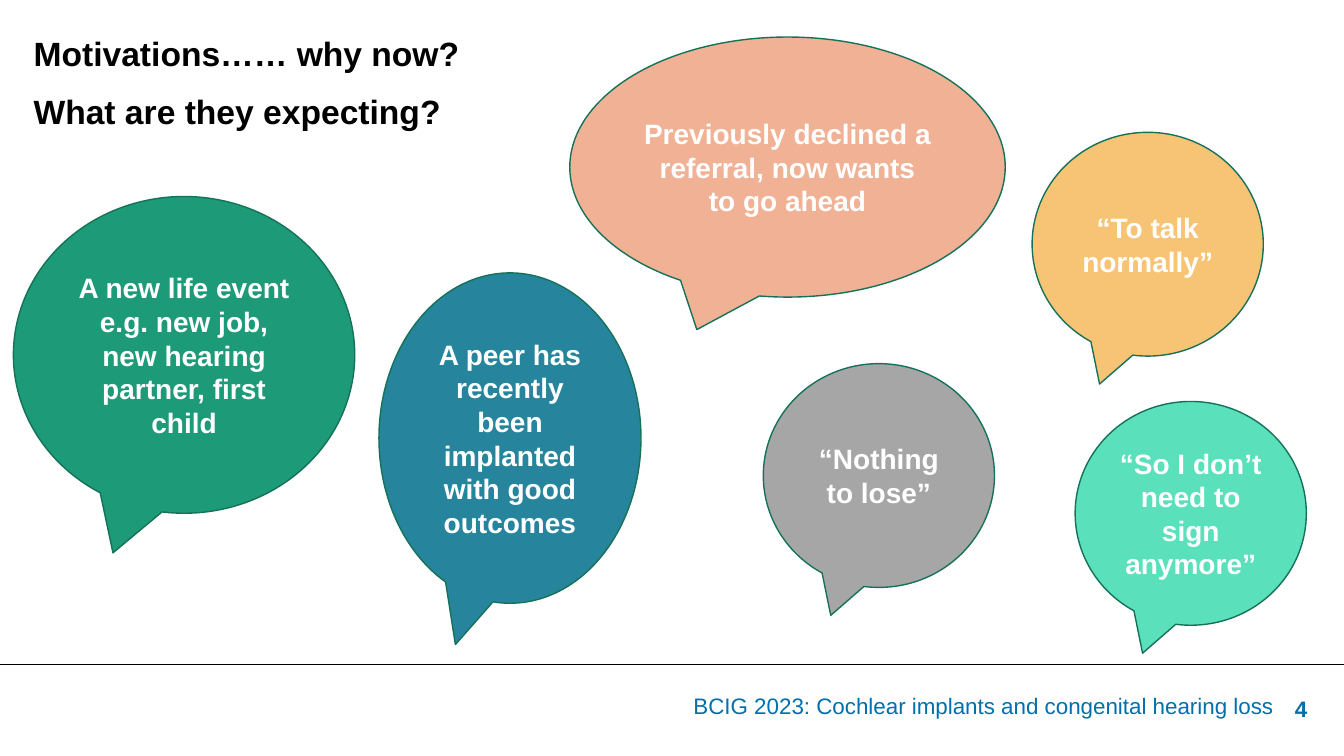
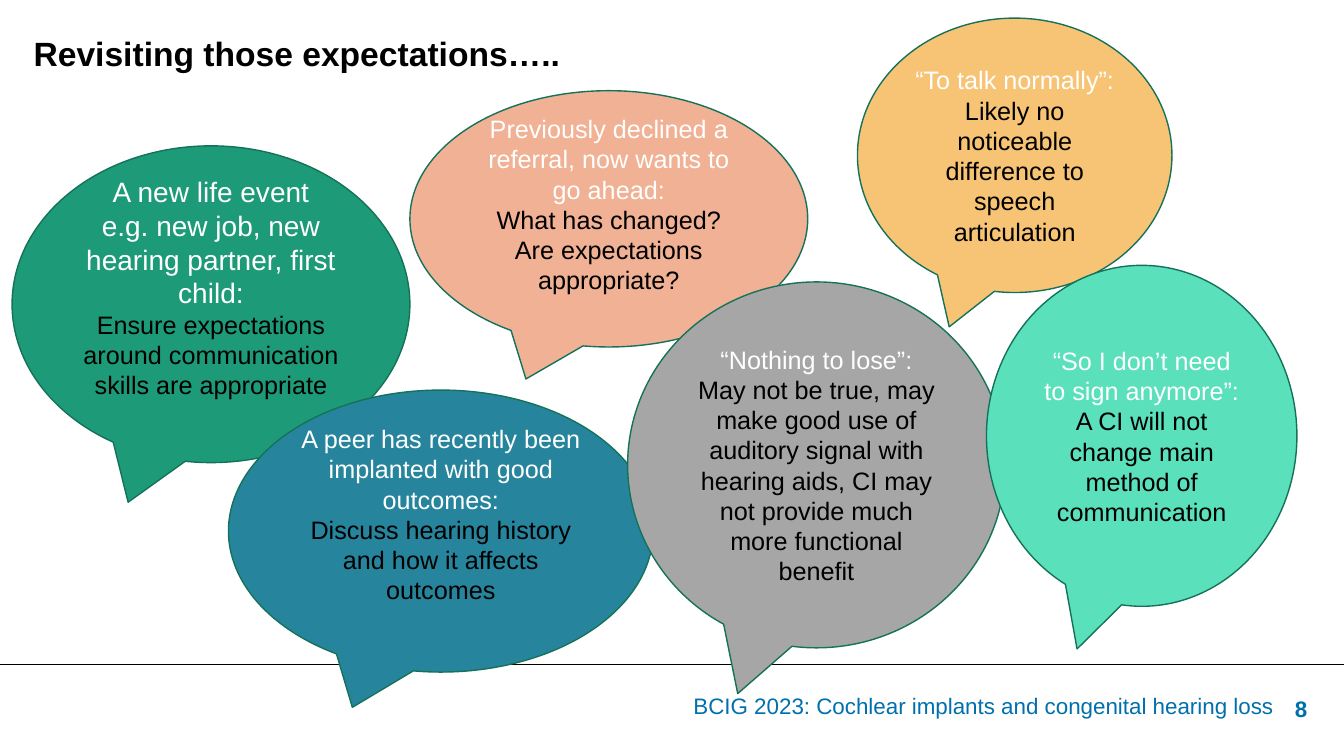
import pptx
import pptx.util
import pptx.dml.color
import pptx.enum.shapes
import pptx.enum.text
from lxml import etree

COLOURS = {
    "green": "1D9A78", "blue": "26859D", "peach": "F0B195", "grey": "A6A6A6",
    "amber": "F7C475", "mint": "5AE0BB", "outline": "157259",
    "white": "FFFFFF", "black": "000000", "footer": "0070AD",
}
WIDTH, HEIGHT = pptx.util.Inches(13.33), pptx.util.Inches(7.5)
FOOTER = "BCIG 2023: Cochlear implants and congenital hearing loss"
ALIGN = pptx.enum.text.PP_ALIGN
ANCHOR = pptx.enum.text.MSO_ANCHOR
NO_INSETS = {"margin_left": 0, "margin_right": 0, "margin_top": 0, "margin_bottom": 0}
SPACED = {"line_spacing": 0.9, "space_after": pptx.util.Pt(6), "alignment": ALIGN.LEFT}

# Boxes are left, top, width and height in percent of the slide.
# Each paragraph of a bubble is text, size, colour.
SLIDES = [
    {
        "number": "4",
        "title": ["Motivations…… why now?", "What are they expecting?"],
        "title_box": (2.5, 4.9, 34.9, 24.4),
        "bold": True,
        "bubbles": [
            ("green", (1, 26, 25.4, 41.9), [
                ("A new life event", 20, "white"),
                ("e.g. new job, new hearing partner, first child", 20, "white")], 0),
            ("blue", (28.2, 36.1, 19.5, 43.7), [
                ("A peer has recently been implanted with good outcomes", 20, "white")], 0),
            ("peach", (42.4, 4.9, 32.4, 34.4), [
                ("Previously declined a referral, now wants to go ahead", 20, "white")], 0),
            ("grey", (56.8, 48.1, 17.2, 29.6), [("“Nothing to lose”", 20, "white")], 0),
            ("amber", (76.8, 17.5, 17.2, 29.6), [("“To talk normally”", 20, "white")], 0),
            ("mint", (80, 53.1, 17.2, 29.6), [
                ("“So I don’t need to sign anymore”", 20, "white")], 0),
        ],
    },
    {
        "number": "8",
        "title": ["Revisiting those expectations….."],
        "title_box": (2.5, 4.9, 45.2, 12.5),
        "bold": False,
        "bubbles": [
            ("green", (0.9, 19.3, 29.6, 41.9), [
                ("A new life event", 20, "white"),
                ("e.g. new job, new hearing partner, first child:", 20, "white"),
                ("Ensure expectations around communication skills are appropriate",
                 18, "black")], 24),
            ("blue", (17, 51.6, 31.6, 37.3), [
                ("A peer has recently been implanted with good outcomes:", 18, "white"),
                ("Discuss hearing history and how it affects outcomes", 18, "black")], 24),
            ("peach", (30.5, 12, 29.6, 33.9), [
                ("Previously declined a referral, now wants to go ahead:", 18, "white"),
                ("What has changed? Are expectations appropriate?", 18, "black")], 21),
            ("grey", (46.7, 37.3, 28.1, 48.4), [
                ("“Nothing to lose”:", 18, "white"),
                ("May not be true, may make good use of auditory signal with hearing aids, "
                 "CI may not provide much more functional benefit", 18, "black")], 0),
            ("amber", (63.8, 2.4, 23.4, 36.3), [
                ("“To talk normally”:", 18, "white"),
                ("Likely no noticeable difference to speech articulation", 18, "black")], 0),
            ("mint", (73.4, 35.1, 23.1, 45.1), [
                ("“So I don’t need to sign anymore”:", 18, "white"),
                ("A CI will not change main method of communication", 18, "black")], 0),
        ],
    },
]


def rgb(name):
    return pptx.dml.color.RGBColor.from_string(COLOURS[name])


def place(box):
    """Turn a box in percent of the slide into lengths."""
    return [round(share / 100 * side) for share, side in zip(box, (WIDTH, HEIGHT) * 2)]


def apply(target, values):
    for attribute, value in values.items():
        setattr(target, attribute, value)


def write(frame, lines, bold, frame_format, paragraph_format, gap=0):
    """Fill a text frame with (text, size, colour) lines, gap points apart."""
    apply(frame, {"word_wrap": True, "auto_size": pptx.enum.text.MSO_AUTO_SIZE.NONE,
                  **frame_format})
    for index, (text, size, colour) in enumerate(lines):
        paragraph = frame.add_paragraph() if index else frame.paragraphs[0]
        paragraph.text = text
        apply(paragraph, paragraph_format)
        paragraph.space_before = pptx.util.Pt(gap if index else 0)
        apply(paragraph.font, {"name": "Arial", "size": pptx.util.Pt(size), "bold": bold})
        paragraph.font.color.rgb = rgb(colour)


def add_title(slide, lines, box):
    title = slide.shapes.title
    apply(title, dict(zip(("left", "top", "width", "height"), place(box))))
    write(title.text_frame, [(line, 24, "black") for line in lines], True,
          {**NO_INSETS, "vertical_anchor": ANCHOR.TOP}, SPACED, gap=10)


def add_footer(slide, number):
    number_box = slide.shapes.add_textbox(*place((94.4, 91.3, 3.6, 4.9)))
    write(number_box.text_frame, [(number, 16, "footer")], True, {},
          {"alignment": ALIGN.RIGHT})
    left, top, width, _ = place((0, 87.9, 100, 0))
    rule = slide.shapes.add_connector(
        pptx.enum.shapes.MSO_CONNECTOR.STRAIGHT, left, top, left + width, top)
    rule.line.color.rgb = rgb("black")
    rule.line.width = pptx.util.Pt(0.5)
    etree.SubElement(rule._element.spPr, pptx.oxml.ns.qn("a:effectLst"))
    event = slide.shapes.add_textbox(*place((51.6, 92, 43.5, 4.7)))
    write(event.text_frame, [(FOOTER, 16, "footer")], False, NO_INSETS, SPACED)


def add_bubble(slide, colour, box, lines, lift, bold):
    """Add a speech bubble; lift is extra room in points below its text."""
    bubble = slide.shapes.add_shape(
        pptx.enum.shapes.MSO_SHAPE.OVAL_CALLOUT, *place(box))
    bubble.shadow.inherit = False
    bubble.fill.solid()
    bubble.fill.fore_color.rgb = rgb(colour)
    bubble.line.color.rgb = rgb("outline")
    bubble.line.width = pptx.util.Pt(1)
    write(bubble.text_frame, lines, bold,
          {"vertical_anchor": ANCHOR.MIDDLE, "margin_bottom": pptx.util.Pt(3.6 + lift)},
          {"alignment": ALIGN.CENTER})


def add_bubble_slide(deck, content):
    slide = deck.slides.add_slide(deck.slide_layouts.get_by_name("Title Only"))
    add_footer(slide, content["number"])
    add_title(slide, content["title"], content["title_box"])
    for bubble in content["bubbles"]:
        add_bubble(slide, *bubble, content["bold"])


def main():
    deck = pptx.Presentation()
    deck.slide_width, deck.slide_height = WIDTH, HEIGHT
    for content in SLIDES:
        add_bubble_slide(deck, content)
    deck.save("out.pptx")


if __name__ == "__main__":
    main()
